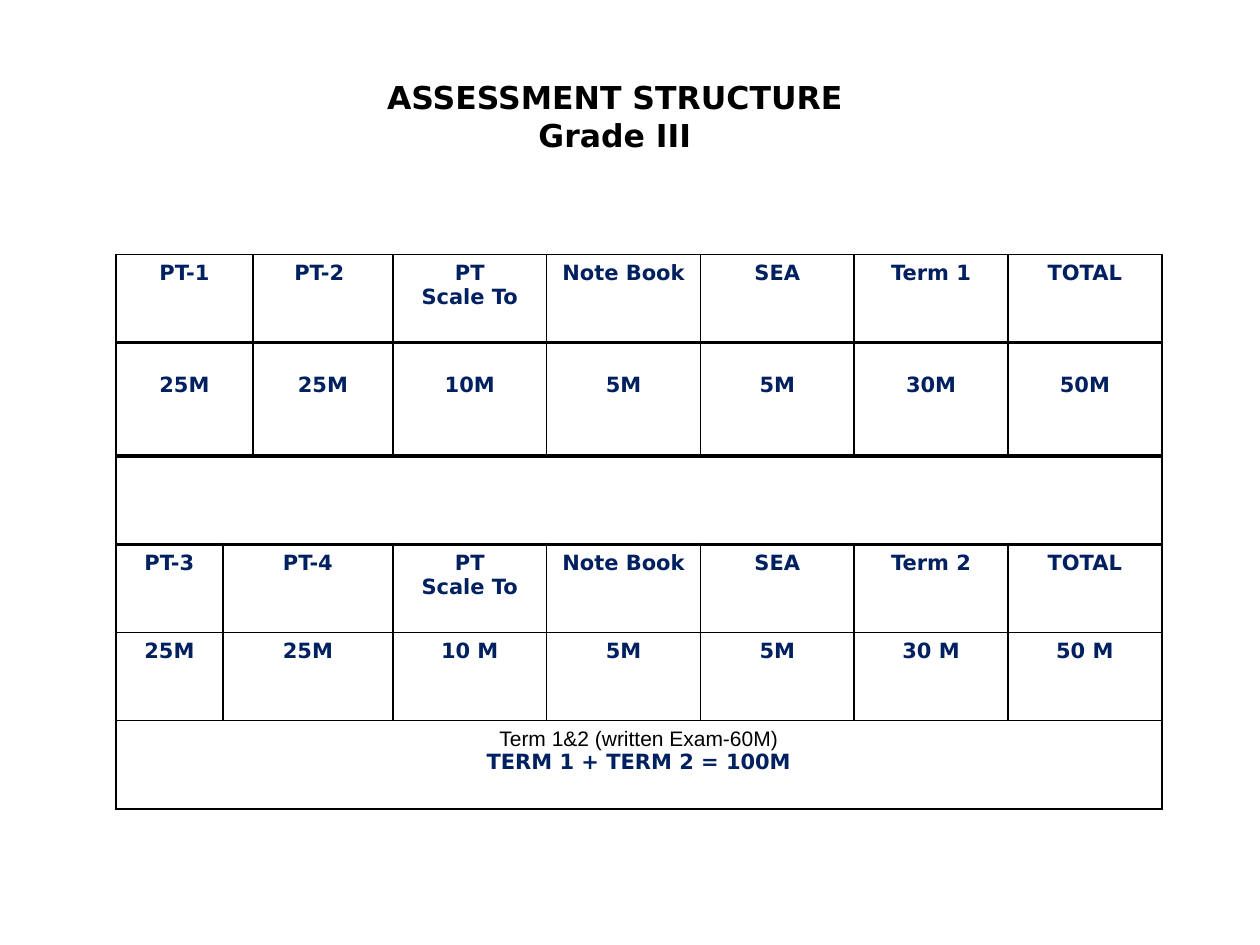
"""Build the Grade III assessment structure slide."""
from dataclasses import dataclass

from lxml import etree
from pptx import Presentation
from pptx.dml.color import RGBColor
from pptx.enum.text import PP_ALIGN
from pptx.oxml.ns import qn
from pptx.util import Pt

CENTER = PP_ALIGN.CENTER


@dataclass(frozen=True)
class Theme:
    ink: str = "000000"
    navy: str = "002060"
    font: str = "DejaVu Sans"
    plain_font: str = "Arial"
    title: float = 18
    body: float = 12
    thin: float = 1
    thick: float = 2


class Deck:
    def __init__(self, prs, theme):
        self.theme = theme
        self.s = prs.slides.add_slide(prs.slide_layouts[6])

    def fill_text(self, tf, lines, size, color, plain=()):
        for i, line in enumerate(lines):
            p = tf.paragraphs[0] if i == 0 else tf.add_paragraph()
            p.text = line
            p.alignment = CENTER
            is_plain = line in plain
            p.font.name = self.theme.plain_font if is_plain else self.theme.font
            p.font.size = Pt(size)
            p.font.bold = not is_plain
            p.font.color.rgb = RGBColor.from_string(self.theme.ink if is_plain else color)

    def title(self, left, top, width, height, lines):
        sp = self.s.shapes.add_textbox(Pt(left), Pt(top), Pt(width), Pt(height))
        sp.text_frame.word_wrap = True
        self.fill_text(sp.text_frame, lines, self.theme.title, self.theme.ink)

    def borders(self, cell, top, bottom):
        tc_pr = cell._tc.get_or_add_tcPr()
        thin = self.theme.thin
        sides = {"a:lnL": thin, "a:lnR": thin, "a:lnT": top, "a:lnB": bottom}
        for i, (tag, width) in enumerate(sides.items()):
            ln = etree.Element(qn(tag), w=str(Pt(width)))
            fill = etree.SubElement(ln, qn("a:solidFill"))
            etree.SubElement(fill, qn("a:srgbClr"), val=self.theme.ink)
            tc_pr.insert(i, ln)

    def table(self, left, top, cols, rows, content, thick_rules, low_row, plain):
        shape = self.s.shapes.add_table(
            len(rows), len(cols), Pt(left), Pt(top), Pt(sum(cols)), Pt(sum(rows)))
        tbl = shape.table
        tbl.first_row = tbl.horz_banding = False
        for col, width in zip(tbl.columns, cols):
            col.width = Pt(width)
        weights = [self.theme.thick if i in thick_rules else self.theme.thin
                   for i in range(len(rows) + 1)]
        for r, (height, cells) in enumerate(zip(rows, content)):
            tbl.rows[r].height = Pt(height)
            for c in range(len(cols)):
                cell = tbl.cell(r, c)
                cell.fill.background()
                self.borders(cell, weights[r], weights[r + 1])
            c = 0
            for text, span in cells:
                cell = tbl.cell(r, c)
                if span > 1:
                    cell.merge(tbl.cell(r, c + span - 1))
                if r == low_row:
                    cell.margin_top = Pt(17.5)
                if text:
                    self.fill_text(cell.text_frame, text.split("\n"),
                                   self.theme.body, self.theme.navy, plain)
                c += span


def spanned(texts, wide):
    return [(text, 2 if i == wide else 1) for i, text in enumerate(texts)]


def main():
    prs = Presentation()
    prs.slide_width, prs.slide_height = Pt(720), Pt(540)
    deck = Deck(prs, Theme())
    exam = "Term 1&2 (written Exam-60M)"
    shared = ["PT\nScale To", "Note Book", "SEA"]
    cols = [61.2, 9.36, 79.9] + [87.9] * 5
    content = [
        spanned(["PT-1", "PT-2 ", *shared, "Term 1", "TOTAL"], 0),
        spanned(["25M", "25M", "10M", "5M", "5M", "30M", "50M"], 0),
        [("", len(cols))],
        spanned(["PT-3", "PT-4", *shared, "Term 2", "TOTAL"], 1),
        spanned(["25M", "25M", "10 M", "5M", "5M", "30 M", "50 M"], 1),
        [(exam + "\nTERM 1 + TERM 2 = 100M", len(cols))],
    ]
    deck.table(66.2, 145.4, cols, [50.4, 64.8] + [50.4] * 4, content,
               thick_rules=(1, 2, 3), low_row=1, plain=(exam,))
    deck.title(66.2, 41, 570.2, 94.3, ["ASSESSMENT STRUCTURE", "Grade III"])
    prs.save("out.pptx")


if __name__ == "__main__":
    main()
